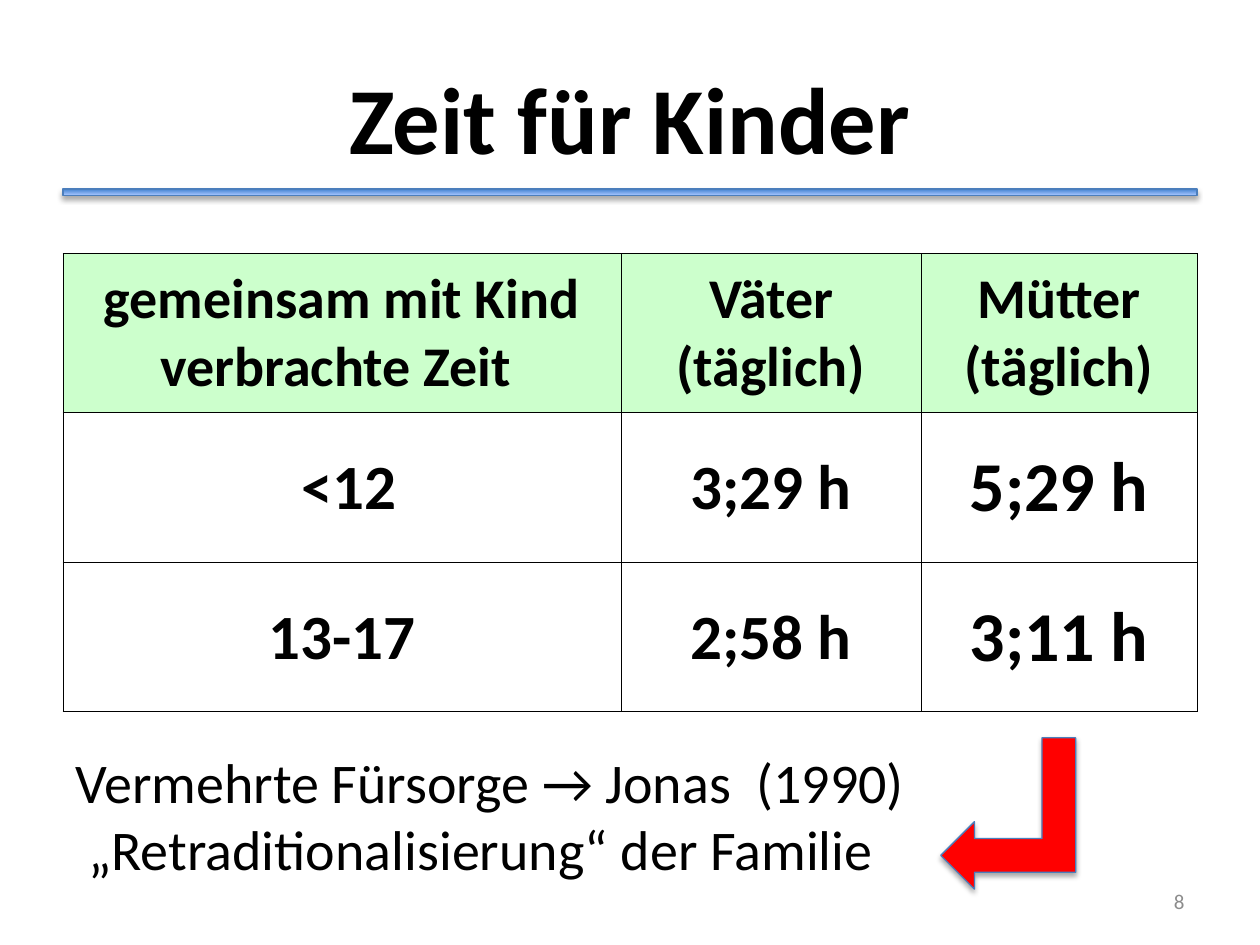
import pptx
import pptx.util
import pptx.oxml
import pptx.oxml.ns
import pptx.dml.color
import pptx.enum.shapes
import pptx.enum.text

Cm = pptx.util.Cm
Pt = pptx.util.Pt
RGBColor = pptx.dml.color.RGBColor
ALIGN = pptx.enum.text.PP_ALIGN
MIDDLE = pptx.enum.text.MSO_ANCHOR.MIDDLE
SHAPE = pptx.enum.shapes.MSO_SHAPE

BLACK = RGBColor(0x00, 0x00, 0x00)
GREY = RGBColor(0x8C, 0x8C, 0x8C)
RED = RGBColor(0xFF, 0x00, 0x00)
MINT = RGBColor(0xCC, 0xFF, 0xCC)
OUTLINE = RGBColor(0x4B, 0x7E, 0xBC)
RULE_DARK = RGBColor(0x3F, 0x80, 0xCE)
RULE_LIGHT = RGBColor(0xA4, 0xC4, 0xFF)
FONT = "Calibri"

MARGIN = Cm(1.27)
CONTENT_WIDTH = Cm(22.86)
COLUMN_WIDTHS = (11.25, 6.05, 5.56)
ROW_HEIGHTS = (3.2, 3.02, 3.02)
CARE_TIMES = (
    ("gemeinsam mit Kind verbrachte Zeit ", "Väter (täglich)", "Mütter (täglich)"),
    (" <12", "3;29 h", "5;29 h"),
    ("13-17", "2;58 h", "3;11 h"),
)
HEADER_SIZES = (32, 32, 32)
VALUE_SIZES = (36, 36, 40)


def style_text(frame, size, color=BLACK, bold=False, align=ALIGN.LEFT):
    for paragraph in frame.paragraphs:
        paragraph.alignment = align
        for run in paragraph.runs:
            run.font.name = FONT
            run.font.size = Pt(size)
            run.font.bold = bold
            run.font.color.rgb = color


def outline_with_shadow(shape):
    shape.line.color.rgb = OUTLINE
    shape.line.width = Pt(0.75)
    shape.shadow.inherit = False
    effects = shape.element.spPr.find(pptx.oxml.ns.qn("a:effectLst"))
    effects.append(pptx.oxml.parse_xml(
        f'<a:outerShdw {pptx.oxml.ns.nsdecls("a")} blurRad="{Pt(3.1)}" dist="{Pt(1.8)}" '
        'dir="5400000" rotWithShape="0"><a:srgbClr val="000000">'
        '<a:alpha val="35000"/></a:srgbClr></a:outerShdw>'))


def flip_vertically(shape):
    shape.element.spPr.xfrm.set("flipV", "1")


def add_borders(cell):
    properties = cell._tc.get_or_add_tcPr()
    for side in ("lnL", "lnR", "lnT", "lnB"):
        properties.append(pptx.oxml.parse_xml(
            f'<a:{side} {pptx.oxml.ns.nsdecls("a")} w="{Pt(0.5)}"><a:solidFill>'
            f'<a:srgbClr val="{BLACK}"/></a:solidFill></a:{side}>'))


def place_heading(slide, left, top, width, height):
    heading = slide.shapes.title
    heading.left, heading.top, heading.width, heading.height = left, top, width, height
    heading.text_frame.text = "Zeit für Kinder"
    heading.text_frame.vertical_anchor = MIDDLE
    style_text(heading.text_frame, 54, bold=True, align=ALIGN.CENTER)

    rule = slide.shapes.add_shape(SHAPE.RECTANGLE, left, top + height - Cm(0.13), width, Cm(0.13))
    flip_vertically(rule)
    rule.fill.gradient()
    rule.fill.gradient_angle = 90
    for stop, color, position in zip(rule.fill.gradient_stops, (RULE_DARK, RULE_LIGHT), (0, 1)):
        stop.color.rgb = color
        stop.position = position
    outline_with_shadow(rule)


def place_care_table(slide, left, top, width, height):
    table = slide.shapes.add_table(
        len(ROW_HEIGHTS), len(COLUMN_WIDTHS), left, top, width, height).table
    table.first_row = False
    table.horz_banding = False
    for column, column_width in zip(table.columns, COLUMN_WIDTHS):
        column.width = Cm(column_width)
    for row_index, (row, row_height) in enumerate(zip(table.rows, ROW_HEIGHTS)):
        row.height = Cm(row_height)
        sizes = VALUE_SIZES if row_index else HEADER_SIZES
        for cell, wording, size in zip(row.cells, CARE_TIMES[row_index], sizes):
            cell.text_frame.text = wording
            cell.vertical_anchor = MIDDLE
            cell.margin_left = cell.margin_right = cell.margin_top = Cm(0.03)
            cell.margin_bottom = 0
            style_text(cell.text_frame, size, bold=True, align=ALIGN.CENTER)
            add_borders(cell)
            if row_index:
                cell.fill.background()
            else:
                cell.fill.solid()
                cell.fill.fore_color.rgb = MINT


def place_conclusion(slide, left, top, width, height):
    conclusion = slide.shapes.add_textbox(left, top, Cm(18.26), height).text_frame
    conclusion.word_wrap = True
    conclusion.text = "Vermehrte Fürsorge → Jonas  (1990)\n „Retraditionalisierung“ der Familie"
    style_text(conclusion, 32)

    arrow = slide.shapes.add_shape(
        SHAPE.BENT_UP_ARROW, left + Cm(17.53), top + Cm(0.1), Cm(3.05), Cm(2.72))
    flip_vertically(arrow)
    arrow.rotation = 90
    arrow.fill.solid()
    arrow.fill.fore_color.rgb = RED
    outline_with_shadow(arrow)


def place_page_number(slide, left, top, width, height):
    page_number = slide.shapes.add_textbox(left, top, width, height).text_frame
    page_number.word_wrap = True
    page_number.vertical_anchor = MIDDLE
    page_number.text = "8"
    style_text(page_number, 12, GREY, align=ALIGN.RIGHT)


def main():
    presentation = pptx.Presentation()
    presentation.slide_width = Cm(25.4)
    presentation.slide_height = Cm(19.05)
    slide = presentation.slides.add_slide(presentation.slide_layouts[5])
    place_heading(slide, MARGIN, Cm(0.76), CONTENT_WIDTH, Cm(3.18))
    place_care_table(slide, MARGIN, Cm(5.11), CONTENT_WIDTH, Cm(sum(ROW_HEIGHTS)))
    place_conclusion(slide, MARGIN, Cm(14.94), CONTENT_WIDTH, Cm(3))
    place_page_number(slide, Cm(18.21), Cm(17.65), Cm(5.92), Cm(1.02))
    presentation.save("out.pptx")


if __name__ == "__main__":
    main()
